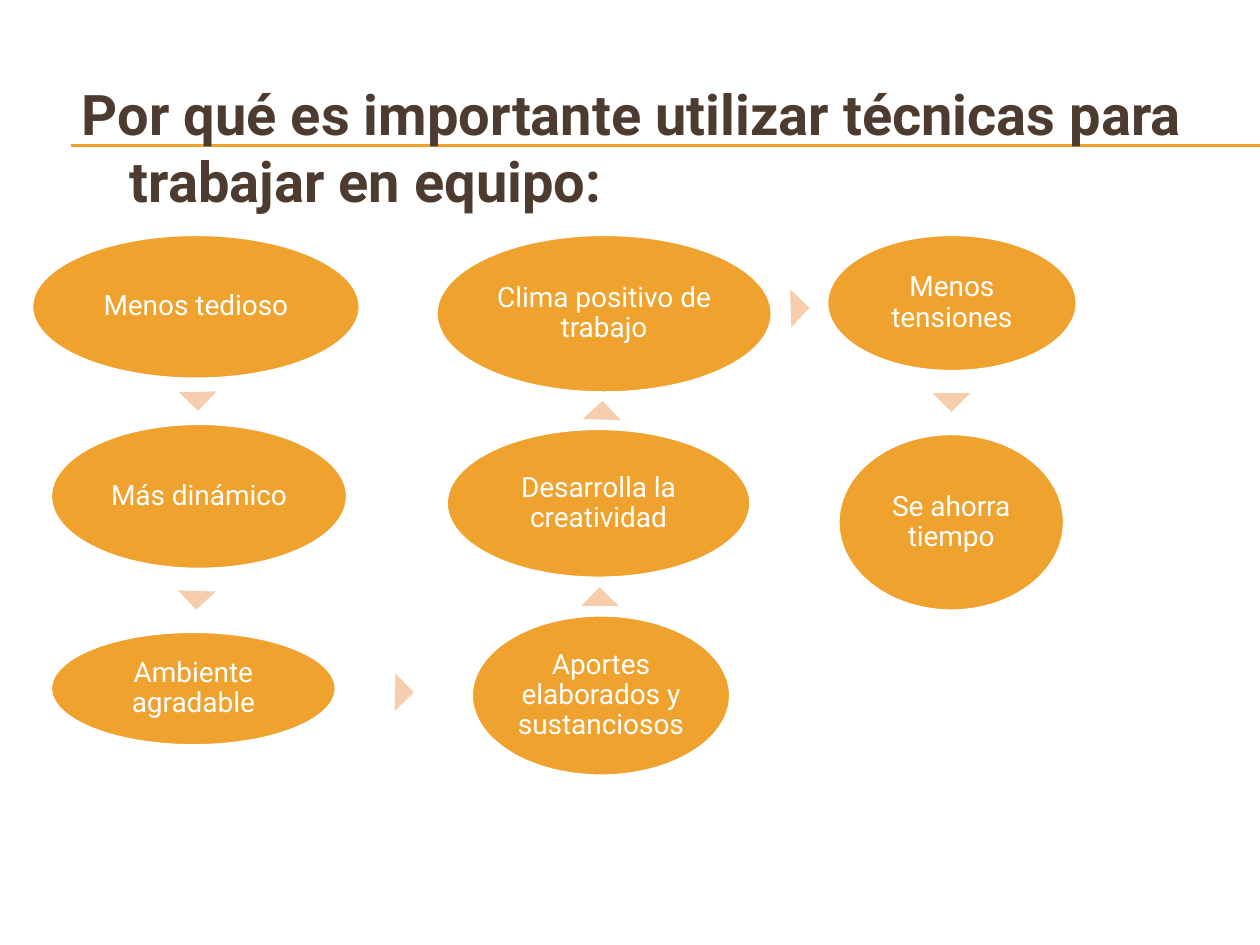
from pptx import Presentation
from pptx.dml.color import RGBColor
from pptx.enum.shapes import MSO_CONNECTOR, MSO_SHAPE
from pptx.enum.text import MSO_ANCHOR, PP_ALIGN
from pptx.oxml.ns import qn
from pptx.util import Inches, Pt
from lxml import etree

ORANGE, PEACH, BROWN, WHITE = "F0A22E", "F6CEAD", "4E3B30", "FFFFFF"
ARROW_WIDTH, ARROW_HEIGHT = 0.3, 0.15

STEPS = [
    ("Menos tedioso", (0.25, 1.86, 2.61, 1.15)),
    ("Más dinámico", (0.4, 3.36, 2.36, 1.16)),
    ("Ambiente agradable", (0.4, 5.01, 2.27, 0.91)),
    ("Aportes elaborados y sustanciosos", (3.74, 4.88, 2.06, 1.28)),
    ("Desarrolla la creatividad", (3.54, 3.4, 2.42, 1.19)),
    ("Clima positivo de trabajo", (3.46, 1.86, 2.67, 1.26)),
    ("Menos tensiones", (6.56, 1.86, 1.99, 1.09)),
    ("Se ahorra tiempo", (6.65, 3.44, 1.8, 1.41)),
]
ARROWS = [
    (1.42, 3.11, 178.7),
    (1.41, 4.69, 181.8),
    (3.06, 5.42, 91),
    (4.61, 4.66, 359.5),
    (4.63, 3.18, 1.8),
    (6.2, 2.37, 88.3),
    (7.4, 3.12, 180),
]


def color(value):
    return RGBColor.from_string(value)


def inches(box):
    return [Inches(length) for length in box]


def apply(target, formats):
    for name, value in formats.items():
        setattr(target, name, value)


def write(para, text, size, ink, bold=False):
    span = para.add_run()
    span.text = text
    apply(span.font, {"name": "Roboto", "size": Pt(size), "bold": bold})
    span.font.color.rgb = color(ink)


def add_filled(page, kind, box, fill):
    shape = page.shapes.add_shape(kind, *inches(box))
    shape.shadow.inherit = False
    shape.fill.solid()
    shape.fill.fore_color.rgb = color(fill)
    shape.line.fill.background()
    return shape


def add_rules(page, left, right, heights):
    for height in heights:
        rule = page.shapes.add_connector(
            MSO_CONNECTOR.STRAIGHT, *inches((left, height, right, height)))
        rule.line.color.rgb = color(ORANGE)
        rule.line.width = Pt(0.75)
        etree.SubElement(rule.element.spPr, qn("a:effectLst"))


def add_title(page, box, text):
    frame = page.shapes.add_textbox(*inches(box)).text_frame
    frame.word_wrap = True
    para = frame.paragraphs[0]
    properties = para._p.get_or_add_pPr()
    properties.set("marL", str(Inches(0.38)))
    properties.set("indent", str(Inches(-0.38)))
    write(para, text, 32, BROWN, bold=True)


def add_step(page, box, text):
    step = add_filled(page, MSO_SHAPE.OVAL, box, ORANGE)
    step.line.color.rgb = color(WHITE)
    step.line.width = Pt(2)
    margins = {f"margin_{side}": Inches(0.02)
               for side in ("left", "top", "right", "bottom")}
    apply(step.text_frame, {
        "word_wrap": True, "vertical_anchor": MSO_ANCHOR.MIDDLE, **margins})
    para = step.text_frame.paragraphs[0]
    apply(para, {"alignment": PP_ALIGN.CENTER, "line_spacing": 0.9})
    write(para, text, 16, WHITE)


def add_arrow(page, box, rotation):
    arrow = add_filled(page, MSO_SHAPE.ISOSCELES_TRIANGLE, box, PEACH)
    arrow.rotation = rotation


def main():
    deck = Presentation()
    apply(deck, {"slide_width": Inches(10), "slide_height": Inches(7.5)})
    page = deck.slides.add_slide(deck.slide_layouts[6])
    add_rules(page, 0.56, 10, (1.15, 1.16))
    add_title(page, (0.55, 0.58, 8.95, 1.28),
              "Por qué es importante utilizar técnicas para trabajar en equipo:")
    for text, box in STEPS:
        add_step(page, box, text)
    for left, top, rotation in ARROWS:
        add_arrow(page, (left, top, ARROW_WIDTH, ARROW_HEIGHT), rotation)
    deck.save("out.pptx")


if __name__ == "__main__":
    main()
